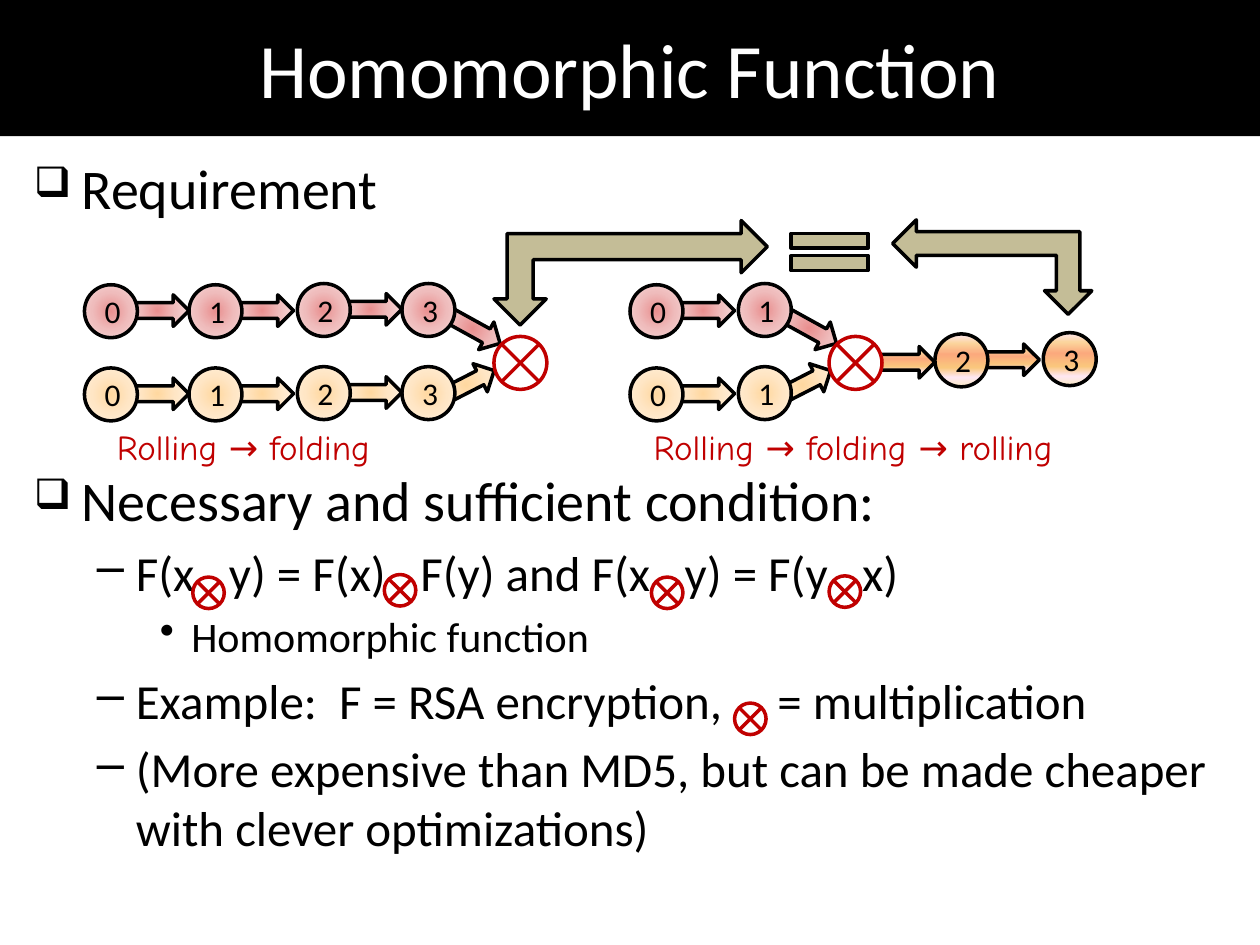
from lxml import etree
from pptx import Presentation
from pptx.dml.color import RGBColor
from pptx.enum.shapes import MSO_SHAPE as Preset
from pptx.enum.text import MSO_ANCHOR as Anchor, PP_ALIGN as Align
from pptx.oxml.ns import qn
from pptx.util import Inches, Pt

TITLE = "Homomorphic Function"
BODY = [
    (0, 6.4, [("Requirement", 0)]),
    (0, 140, [("Necessary and sufficient condition:", 0)]),
    (1, 5.6, [("F(x . y) = F(x) . F(y) and F(x . y) = F(y . x)", 0)]),
    (2, 4.8, [("Homomorphic function", 0)]),
    (1, 5.6, [("Example:", 0), (" ", 6.3), ("F = RSA encryption,", 0),
              (" ", 25.3), ("= multiplication", 0)]),
    (1, 5.6, [("(More expensive than MD5, but can be made cheaper "
               "with clever optimizations)", 0)]),
]
LEVELS = [
    dict(size=32, margin=0.38, hang=0.38, bullet="❑", scale=75),
    dict(size=28, margin=0.81, hang=0.31, bullet="–", scale=100),
    dict(size=24, margin=1.25, hang=0.25, bullet="•", scale=100),
]
CAPTIONS = [
    (0.83, 2.41, "Rolling → folding"),
    (5.09, 3.67, "Rolling → folding → rolling"),
]

RED = [(0, "E98F8F"), (50, "EFBCBC"), (100, "F7DEDE")]
YELLOW = [(0, "FFD8A0"), (50, "FFE6C5"), (100, "FFF2E3")]
MIXED = [(0, "FBEAC7"), (18, "FEE7F2"), (36, "FAC77D"),
         (61, "FBA97D"), (82, "FBD49C"), (100, "FEE7F2")]
LEFT_CHAIN = [(0.67, 2.26), (1.5, 2.26), (2.36, 2.25), (3.19, 2.25)]
RIGHT_CHAIN = [(5, 2.26), (5.86, 2.25)]
ROLLED_CHAIN = [(7.42, 2.65), (8.28, 2.64)]
ROW_GAP = 0.66
NODE = 0.42
FOLDS = [(3.92, 2.67), (6.58, 2.67)]
OPERATORS = [(5.17, 4.58), (6.58, 4.57), (1.53, 4.58), (3.05, 4.56), (5.83, 5.58)]
OPERATOR = 0.25
COMPARISON = [
    (Preset.MATH_EQUAL, 6.17, 1.75, 0.83, 0.5, 0),
    (Preset.LEFT_UP_ARROW, 3.92, 1.75, 2.17, 0.83, 180),
    (Preset.LEFT_UP_ARROW, 7.5, 1.33, 0.75, 1.58, 270),
]

deck = Presentation()
deck.slide_width, deck.slide_height = Inches(10), Inches(7.5)
page = deck.slides.add_slide(deck.slide_layouts[6])


def color(value):
    return RGBColor.from_string(value)


def write(para, text, size=18, font="Calibri", ink="000000", align=None, spacing=0):
    span = para.add_run()
    span.text = text
    span.font.size = Pt(size)
    span.font.name = font
    span.font.color.rgb = color(ink)
    if align is not None:
        para.alignment = align
    if spacing:
        span.font._element.set("spc", str(round(spacing * 100)))


def paint_gradient(shape, stops):
    shape.fill.gradient()
    gradient = shape._element.spPr.find(qn("a:gradFill"))
    for child in list(gradient):
        gradient.remove(child)
    stop_list = etree.SubElement(gradient, qn("a:gsLst"))
    for place, value in stops:
        stop = etree.SubElement(stop_list, qn("a:gs"), pos=str(place * 1000))
        etree.SubElement(stop, qn("a:srgbClr"), val=value)
    if stops is MIXED:
        etree.SubElement(gradient, qn("a:lin"), ang="16200000", scaled="0")
    else:
        radial = etree.SubElement(gradient, qn("a:path"), path="circle")
        etree.SubElement(radial, qn("a:fillToRect"),
                         {side: "50000" for side in "ltrb"})


def add_shape(preset, x, y, width, height, fill, line="000000", turn=0):
    shape = page.shapes.add_shape(preset, Inches(x), Inches(y),
                                  Inches(width), Inches(height))
    shape.shadow.inherit = False
    shape.rotation = turn
    if isinstance(fill, str):
        shape.fill.solid()
        shape.fill.fore_color.rgb = color(fill)
    else:
        paint_gradient(shape, fill)
    if line:
        shape.line.color.rgb = color(line)
        shape.line.width = Pt(2)
    else:
        shape.line.fill.background()
    return shape


def add_text_box(x, y, width, height, wrap):
    box = page.shapes.add_textbox(Inches(x), Inches(y), Inches(width), Inches(height))
    box.text_frame.word_wrap = wrap
    return box.text_frame


def add_centered(shape, text, **style):
    shape.text_frame.vertical_anchor = Anchor.MIDDLE
    write(shape.text_frame.paragraphs[0], text, align=Align.CENTER, **style)


def add_arrow(x, y, fill, turn=0):
    add_shape(Preset.RIGHT_ARROW, x, y, 0.5, 0.25, fill, turn=turn)


def add_chain(points, fill, first=0):
    for x, y in points[:-1]:
        add_arrow(x + 0.33, y + 0.08, fill)
    for number, (x, y) in enumerate(points, first):
        node = add_shape(Preset.OVAL, x, y, NODE, NODE, fill)
        add_centered(node, str(number))


def add_junction(x, y, size):
    add_shape(Preset.FLOWCHART_SUMMING_JUNCTION, x, y, size, size, "FFFFFF", "C00000")


def set_bullet(para, bullet, scale, margin, hang, **_):
    props = para._p.get_or_add_pPr()
    props.set("marL", str(Inches(margin)))
    props.set("indent", str(-Inches(hang)))
    ink = etree.SubElement(props, qn("a:buClr"))
    etree.SubElement(ink, qn("a:srgbClr"), val="000000")
    etree.SubElement(props, qn("a:buSzPct"), val=str(scale * 1000))
    etree.SubElement(props, qn("a:buChar"), char=bullet)


title = add_shape(Preset.RECTANGLE, 0, 0, 10, 1.08, "000000", None)
add_centered(title, TITLE, size=44, ink="FFFFFF")

body = add_text_box(0.17, 1.17, 9.58, 5.92, True)
for index, (level, gap, pieces) in enumerate(BODY):
    para = body.add_paragraph() if index else body.paragraphs[0]
    para.level = level
    para.space_before = Pt(gap)
    set_bullet(para, **LEVELS[level])
    for text, spacing in pieces:
        write(para, text, size=LEVELS[level]["size"], spacing=spacing)

for chain in (LEFT_CHAIN, RIGHT_CHAIN):
    lower = [(x, y + ROW_GAP) for x, y in chain]
    (x, y), (lower_x, lower_y) = chain[-1], lower[-1]
    add_arrow(lower_x + 0.26, lower_y + 0.02, YELLOW, 332.9)
    add_arrow(x + 0.31, y + 0.23, RED, 28.9)
    add_chain(chain, RED)
    add_chain(lower, YELLOW)

add_arrow(FOLDS[1][0] + 0.34, FOLDS[1][1] + 0.08, MIXED)
add_chain(ROLLED_CHAIN, MIXED, first=2)
for x, y in FOLDS:
    add_junction(x, y, NODE)
for preset, x, y, width, height, turn in COMPARISON:
    add_shape(preset, x, y, width, height, "C4BD97", turn=turn)

for x, width, text in CAPTIONS:
    caption = add_text_box(x, 3.33, width, 0.44, False)
    write(caption.paragraphs[0], text, size=20, font="Comic Neue", ink="C00000")
for x, y in OPERATORS:
    add_junction(x, y, OPERATOR)

deck.save("out.pptx")
